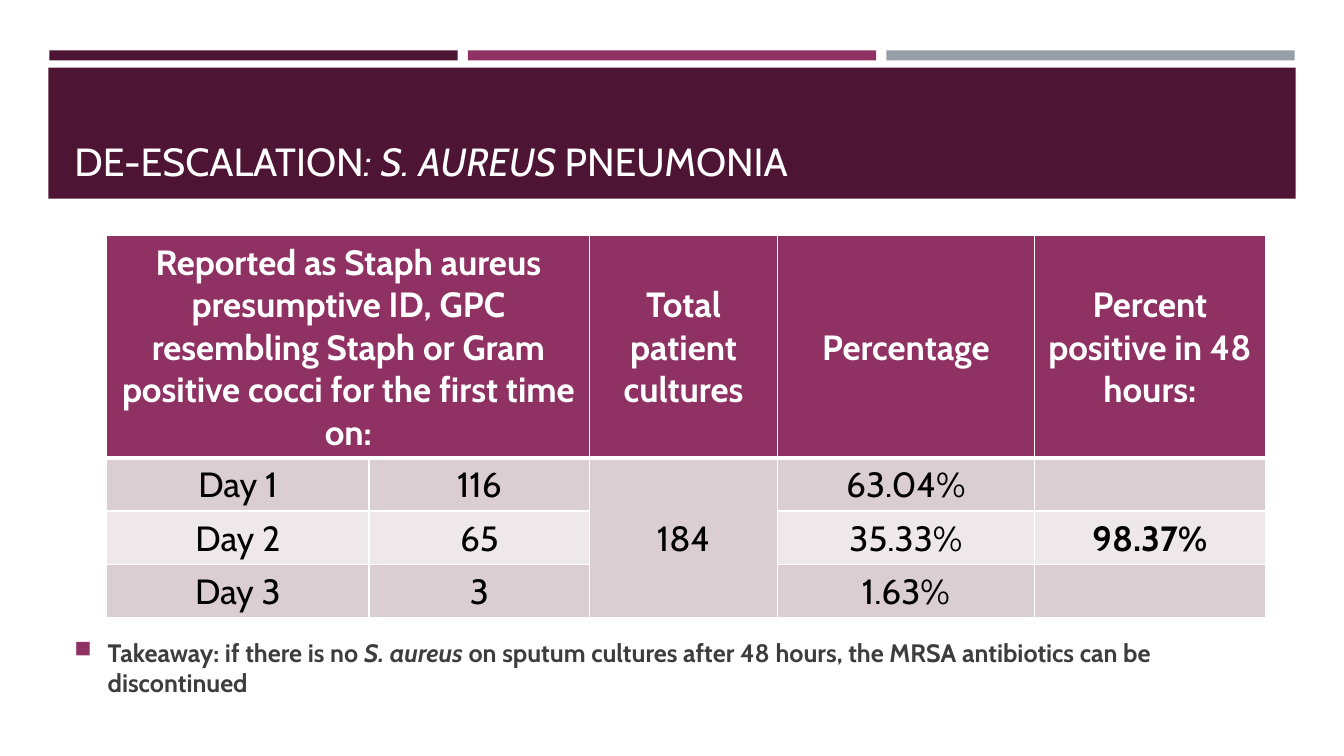
from lxml import etree
from pptx import Presentation
from pptx.dml.color import RGBColor
from pptx.enum.shapes import MSO_SHAPE as Shape
from pptx.enum.text import MSO_ANCHOR as Anchor, PP_ALIGN as Align
from pptx.oxml.ns import qn
from pptx.util import Inches, Pt

# Content: text runs are (text, italic)
FONT = "Cabin"
COLORS = {"plum": "4D1434", "magenta": "903163", "gray": "969FA7", "white": "FFFFFF",
          "black": "000000", "text": "3D3D3D", "band_dark": "DBCED3", "band_light": "EEE8EA"}
TITLE = [("DE-ESCALATION", False), (": S. AUREUS", True), (" PNEUMONIA", False)]
TAKEAWAY = [("Takeaway: if there is no ", False), ("S. aureus ", True),
            ("on sputum cultures after 48 hours, the MRSA antibiotics can be discontinued", False)]
ROWS = [
    ["Reported as Staph aureus presumptive ID, GPC resembling Staph or Gram positive cocci "
     "for the first time on:", "", "Total patient cultures", "Percentage",
     "Percent positive in 48 hours:"],
    ["Day 1", "116", "184", "63.04%", ""],
    ["Day 2", "65", "", "35.33%", "98.37%"],
    ["Day 3", "3", "", "1.63%", ""],
]
BOLD_VALUES = {"98.37%"}
MERGES = [((0, 0), (0, 1)), ((1, 2), (3, 2))]
COLUMN_WIDTHS = [2.6, 2.19, 1.86, 2.55, 2.29]
ROW_HEIGHTS = [2.2, 0.53, 0.53, 0.53]


def color(name):
    return RGBColor.from_string(COLORS[name])


def add_bar(left, top, width, height, fill):
    shape = slide.shapes.add_shape(Shape.RECTANGLE, *map(Inches, (left, top, width, height)))
    shape.shadow.inherit = False
    shape.fill.solid()
    shape.fill.fore_color.rgb = color(fill)
    shape.line.fill.background()


def style(paragraph, size, fill, bold=False):
    font = paragraph.font
    font.name, font.size, font.bold = FONT, Pt(size), bold
    font.color.rgb = color(fill)


def add_text(box, anchor, runs, size, fill, bold=False):
    frame = slide.shapes.add_textbox(*map(Inches, box)).text_frame
    frame.word_wrap = True
    frame.vertical_anchor = anchor
    paragraph = frame.paragraphs[0]
    style(paragraph, size, fill, bold)
    for text, italic in runs:
        run = paragraph.add_run()
        run.text = text
        run.font.italic = italic
    return paragraph


def add_bullet(paragraph, indent):
    properties = paragraph._p.get_or_add_pPr()
    properties.set("marL", str(Inches(indent)))
    properties.set("indent", str(-Inches(indent)))
    bullet_color = etree.Element(qn("a:buClr"))
    etree.SubElement(bullet_color, qn("a:srgbClr"), val=COLORS["magenta"])
    bullet_size = etree.Element(qn("a:buSzPct"), val="92000")
    bullet = etree.Element(qn("a:buChar"), char="■")
    for position, element in enumerate((bullet_color, bullet_size, bullet)):
        properties.insert(position, element)


def set_borders(cell, widths):
    properties = cell._tc.get_or_add_tcPr()
    for position, (side, width) in enumerate(widths.items()):
        line = etree.Element(qn(f"a:ln{side}"), w=str(Pt(width)))
        fill = etree.SubElement(line, qn("a:solidFill"))
        etree.SubElement(fill, qn("a:srgbClr"), val=COLORS["white"])
        properties.insert(position, line)


presentation = Presentation()
presentation.slide_width, presentation.slide_height = Inches(13.33), Inches(7.5)
slide = presentation.slides.add_slide(presentation.slide_layouts[6])

# Accent bars and title band
for index, fill in enumerate(("plum", "magenta", "gray")):
    add_bar(0.49 + index * 4.15, 0.5, 4.05, 0.1, fill)
add_bar(0.48, 0.67, 12.37, 1.3, "plum")
add_text((0.64, 0.77, 12.06, 1.11), Anchor.BOTTOM, TITLE, 28, "white")

# Takeaway
takeaway = add_text((0.64, 6.27, 12.06, 0.72), Anchor.TOP, TAKEAWAY, 18, "text", True)
add_bullet(takeaway, 0.33)

# Culture results table
table = slide.shapes.add_table(len(ROWS), len(COLUMN_WIDTHS), Inches(1.06), Inches(2.34),
                               Inches(sum(COLUMN_WIDTHS)), Inches(sum(ROW_HEIGHTS))).table
for column, width in zip(table.columns, COLUMN_WIDTHS):
    column.width = Inches(width)
for row, height in zip(table.rows, ROW_HEIGHTS):
    row.height = Inches(height)
for row_index, values in enumerate(ROWS):
    header = row_index == 0
    band = "magenta" if header else "band_dark" if row_index % 2 else "band_light"
    for column_index, value in enumerate(values):
        cell = table.cell(row_index, column_index)
        cell.fill.solid()
        cell.fill.fore_color.rgb = color(band)
        cell.vertical_anchor = Anchor.MIDDLE
        cell.margin_left = cell.margin_right = cell.margin_top = Inches(0.02)
        cell.margin_bottom = 0
        cell.text = value
        paragraph = cell.text_frame.paragraphs[0]
        paragraph.alignment = Align.CENTER
        style(paragraph, 25, "white" if header else "black", header or value in BOLD_VALUES)
        set_borders(cell, {"L": 1, "R": 1, "T": 3 if row_index == 1 else 1,
                           "B": 3 if header else 1})
for first, last in MERGES:
    table.cell(*first).merge(table.cell(*last))

presentation.save("out.pptx")
